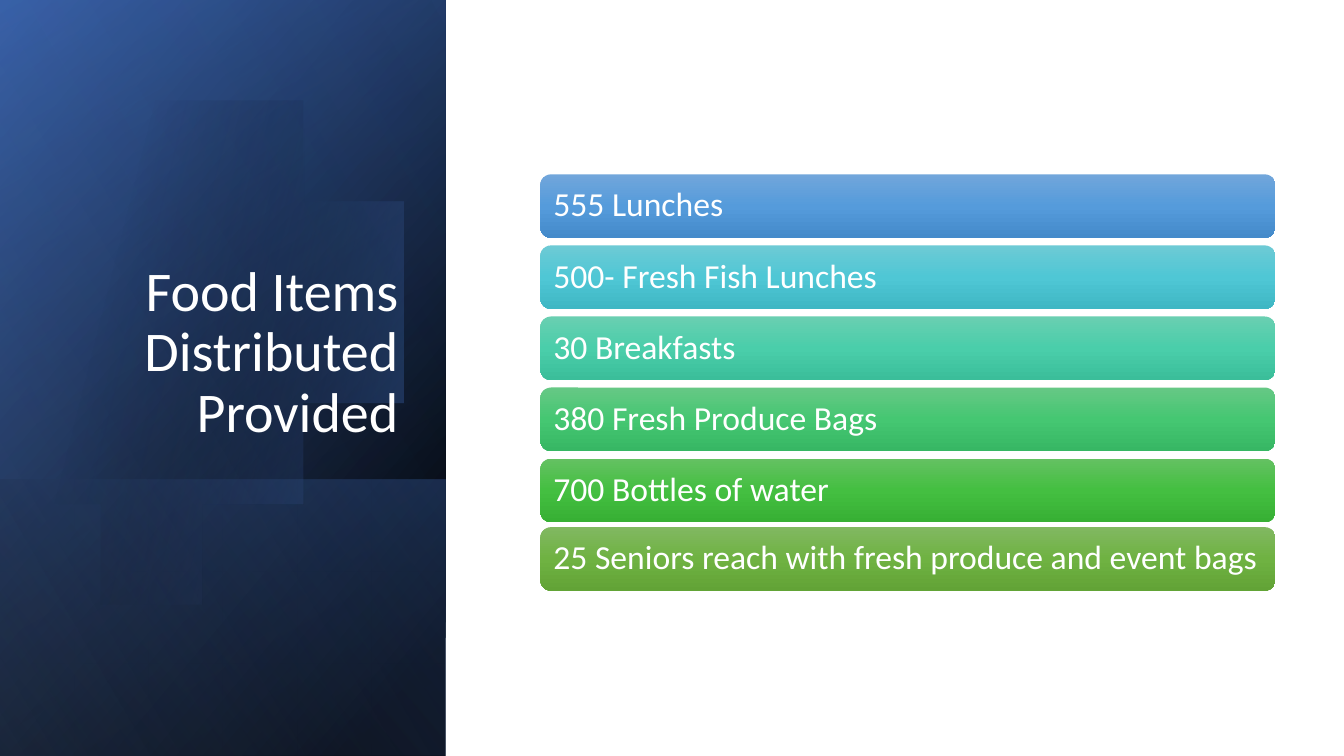
import math

import pptx
import pptx.dml.color
import pptx.enum.shapes
import pptx.enum.text
import pptx.oxml.ns
import pptx.util
from lxml import etree

WIDTH, HEIGHT = 13.33, 7.5
PANEL_WIDTH = 4.42
FONT = "Calibri"
CARD_LEFT, CARD_WIDTH, CARD_HEIGHT = 5.36, 7.29, 0.63
CARD_TOP, CARD_PITCH, LAST_CARD_TOP = 1.73, 0.705, 5.23

PANEL_LAYERS = [
    (0, HEIGHT, [(8, "000000", 100), (100, "2F5597", 100)], 50),
    (0, HEIGHT, [(0, "000000", 0), (99, "4472C4", 46)], 30),
    (4.76, 2.74, [(2, "4472C4", 29), (100, "000000", 30)], 130),
]
DISC_STOPS = [(29, "000000", 0), (100, "4472C4", 43)]
SHEEN_LAYER = (0, HEIGHT, [(0, "000000", 0), (99, "8FAADC", 11)], 120)

FOOD_ITEMS = [
    ("555 Lunches", ("71A6DB", "559BDB", "448ACA")),
    ("500- Fresh Fish Lunches", ("6DCAD5", "4FC7D5", "3FB7C4")),
    ("30 Breakfasts", ("69CFB1", "4ACEAA", "3BBE9A")),
    ("380 Fresh Produce Bags", ("66C885", "45C772", "37B764")),
    ("700 Bottles of water", ("64C162", "44BF41", "37B034")),
    ("25 Seniors reach with fresh produce and event bags", ("81B861", "6FB242", "62A336")),
]


def color(hex_string):
    """Return the colour for a hex string."""
    return pptx.dml.color.RGBColor.from_string(hex_string)


def inches(*values):
    """Convert several numbers to lengths in inches."""
    return [pptx.util.Inches(value) for value in values]


def fill_gradient(shape, stops, angle):
    """Fill with (percent, colour, opacity) stops, the angle running clockwise."""
    qn = pptx.oxml.ns.qn
    shape.shadow.inherit = False
    shape.line.fill.background()
    shape.fill.gradient()
    shape.fill.gradient_angle = 360 - angle
    stop_list = shape._element.spPr.find(".//" + qn("a:gsLst"))
    for old_stop in list(stop_list):
        stop_list.remove(old_stop)
    for percent, hex_string, opacity in stops:
        stop = etree.SubElement(stop_list, qn("a:gs"), pos=str(percent * 1000))
        stop_color = etree.SubElement(stop, qn("a:srgbClr"), val=hex_string)
        if opacity < 100:
            etree.SubElement(stop_color, qn("a:alpha"), val=str(opacity * 1000))


def add_panel_layer(slide, top, height, stops, angle):
    """Add a mirrored layer on the left panel, turned by a quarter."""
    left = (PANEL_WIDTH - height) / 2
    turned_top = top + (height - PANEL_WIDTH) / 2
    shape = slide.shapes.add_shape(
        pptx.enum.shapes.MSO_SHAPE.RECTANGLE, *inches(left, turned_top, height, PANEL_WIDTH))
    shape.rotation = 90
    shape._element.spPr.xfrm.set("flipH", "1")
    fill_gradient(shape, stops, angle)


def add_disc(slide, center_x, center_y, radius):
    """Add a disc cut off at the left edge of the slide."""
    cut = math.acos(-center_x / radius)
    steps = 120
    angles = [cut * (2 * step / steps - 1) for step in range(steps + 1)]
    points = [(center_x + radius * math.cos(angle), center_y + radius * math.sin(angle))
              for angle in angles]
    builder = slide.shapes.build_freeform(*points[0], scale=pptx.util.Inches(1))
    builder.add_line_segments(points[1:], close=True)
    fill_gradient(builder.convert_to_shape(), DISC_STOPS, 14)


def set_text(shape, text, size, alignment, anchor):
    """Write one white paragraph into a shape."""
    frame = shape.text_frame
    frame.text = text
    frame.word_wrap = True
    frame.vertical_anchor = anchor
    paragraph = frame.paragraphs[0]
    paragraph.alignment = alignment
    paragraph.line_spacing = 0.9
    font = paragraph.runs[0].font
    font.name, font.size = FONT, pptx.util.Pt(size)
    font.color.rgb = color("FFFFFF")


def place_title(slide, text):
    """Move the title onto the panel and format it."""
    title = slide.shapes.title
    title.left, title.top, title.width, title.height = inches(0.64, 1.84, 3.41, 2.62)
    set_text(title, text, 40, pptx.enum.text.PP_ALIGN.RIGHT, pptx.enum.text.MSO_ANCHOR.BOTTOM)
    tree = slide.shapes._spTree
    tree.remove(title._element)
    tree.append(title._element)


def add_card(slide, row, text, shades):
    """Add the rounded card of one food item."""
    top = min(CARD_TOP + row * CARD_PITCH, LAST_CARD_TOP)
    card = slide.shapes.add_shape(
        pptx.enum.shapes.MSO_SHAPE.ROUNDED_RECTANGLE,
        *inches(CARD_LEFT, top, CARD_WIDTH, CARD_HEIGHT))
    fill_gradient(card, [(50 * step, shade, 100) for step, shade in enumerate(shades)], 90)
    frame = card.text_frame
    frame.margin_left = frame.margin_right = pptx.util.Inches(0.1)
    set_text(card, text, 24, pptx.enum.text.PP_ALIGN.LEFT, pptx.enum.text.MSO_ANCHOR.MIDDLE)


def main():
    """Build the slide and save it."""
    presentation = pptx.Presentation()
    presentation.slide_width, presentation.slide_height = inches(WIDTH, HEIGHT)
    slide = presentation.slides.add_slide(presentation.slide_layouts[5])
    for layer in PANEL_LAYERS:
        add_panel_layer(slide, *layer)
    add_disc(slide, 1.43, 3.38, 2.3)
    add_panel_layer(slide, *SHEEN_LAYER)
    place_title(slide, "Food Items Distributed Provided")
    for row, (text, shades) in enumerate(FOOD_ITEMS):
        add_card(slide, row, text, shades)
    presentation.save("out.pptx")


if __name__ == "__main__":
    main()
